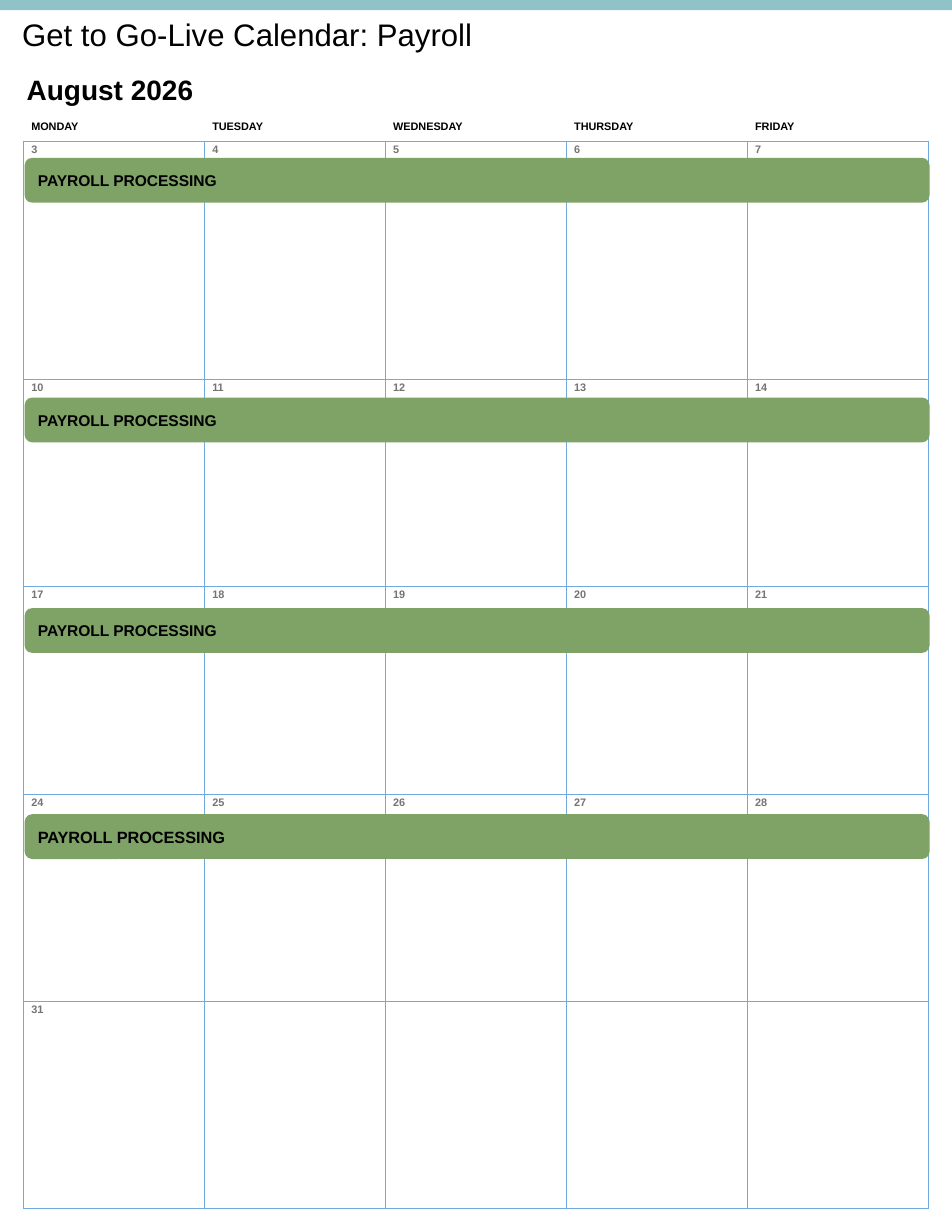
from typing import NamedTuple

from lxml.etree import SubElement
from pptx import Presentation
from pptx.dml.color import RGBColor
from pptx.enum.shapes import MSO_SHAPE as Preset
from pptx.enum.text import MSO_ANCHOR as Anchor
from pptx.oxml.ns import qn
from pptx.util import Inches, Pt

PAGE_WIDTH, PAGE_HEIGHT = 8.5, 11
GRID_LEFT, GRID_TOP, GRID_WIDTH = 0.21, 1, 8.08
HEADER_HEIGHT, FIRST_WEEK_HEIGHT, WEEK_HEIGHT = 0.26, 2.13, 1.85
WEEKDAYS = ["MONDAY", "TUESDAY", "WEDNESDAY", "THURSDAY", "FRIDAY"]
FIRST_MONDAY, LAST_DAY, WEEKS = 3, 31, 5
BLACK, DAY_GREY, WHITE = "000000", "747474", "FFFFFF"
TEAL, GREEN, GRID_BLUE = "90C3C8", "7FA267", "71AAE0"


class Heading(NamedTuple):
    """A line of text above the calendar."""
    words: str
    left: float
    top: float
    width: float
    height: float
    size: float
    bold: bool


class Event(NamedTuple):
    """A bar across one week, dropped below the top of its row."""
    words: str
    week: int
    drop: float
    size: float = 10


HEADINGS = [
    Heading("August 2026", 0.14, 0.6, 2.82, 0.4, 18, True),
    Heading("Get to Go-Live Calendar: Payroll", 0.1, 0.09, 6.96, 0.44, 20, False),
]
EVENTS = [
    Event("PAYROLL PROCESSING", 0, 0.15),
    Event("PAYROLL PROCESSING", 1, 0.16),
    Event("PAYROLL PROCESSING", 2, 0.19),
    Event("PAYROLL PROCESSING", 3, 0.18, 10.5),
]


def colour(value: str) -> RGBColor:
    """Turn a hex string into a colour."""
    return RGBColor.from_string(value)


def write(frame, words: str, size: float, bold: bool, ink: str = BLACK) -> None:
    """Add one run to the first paragraph of a frame."""
    run = frame.paragraphs[0].add_run()
    run.text = words
    run.font.name = "Arial"
    run.font.size = Pt(size)
    run.font.bold = bold
    run.font.color.rgb = colour(ink)


def week_top(week: int) -> float:
    """Return the top of a week's row."""
    earlier = FIRST_WEEK_HEIGHT + (week - 1) * WEEK_HEIGHT if week else 0
    return GRID_TOP + HEADER_HEIGHT + earlier


def draw_borders(cell, visible: str) -> None:
    """Rule the named sides of a cell and clear the others."""
    properties = cell._tc.get_or_add_tcPr()
    for position, side in enumerate("LRTB"):
        line = SubElement(properties, qn(f"a:ln{side}"), w=str(Pt(0.75)))
        if side in visible:
            fill = SubElement(line, qn("a:solidFill"))
            SubElement(fill, qn("a:srgbClr"), val=GRID_BLUE)
        else:
            SubElement(line, qn("a:noFill"))
        properties.insert(position, line)


def fill_cell(cell, words: str, header: bool) -> None:
    """Style a calendar cell and write its label."""
    cell.margin_left = cell.margin_right = Inches(0.07)
    cell.margin_top = cell.margin_bottom = Inches(0.02)
    if header:
        cell.vertical_anchor = Anchor.MIDDLE
        cell.fill.background()
    else:
        cell.fill.solid()
        cell.fill.fore_color.rgb = colour(WHITE)
    draw_borders(cell, "B" if header else "LRTB")
    if words:
        write(cell.text_frame, words, 7, True, BLACK if header else DAY_GREY)


def draw_calendar(slide) -> None:
    """Draw the weekdays and the numbered weeks as a table."""
    heights = [HEADER_HEIGHT, FIRST_WEEK_HEIGHT] + [WEEK_HEIGHT] * (WEEKS - 1)
    table = slide.shapes.add_table(
        len(heights), len(WEEKDAYS), Inches(GRID_LEFT), Inches(GRID_TOP),
        Inches(GRID_WIDTH), Inches(sum(heights))).table
    table.first_row = table.horz_banding = False
    for row, height in zip(table.rows, heights):
        row.height = Inches(height)
    for column, weekday in enumerate(WEEKDAYS):
        fill_cell(table.cell(0, column), weekday, True)
        for week in range(WEEKS):
            day = FIRST_MONDAY + 7 * week + column
            label = str(day) if day <= LAST_DAY else ""
            fill_cell(table.cell(week + 1, column), label, False)


def draw_bar(slide, preset: Preset, left: float, top: float,
             width: float, height: float, fill: str):
    """Draw a flat filled shape without an outline."""
    bar = slide.shapes.add_shape(
        preset, Inches(left), Inches(top), Inches(width), Inches(height))
    bar.shadow.inherit = False
    bar.fill.solid()
    bar.fill.fore_color.rgb = colour(fill)
    bar.line.fill.background()
    return bar


def draw_heading(slide, heading: Heading) -> None:
    """Draw a heading in its text box."""
    frame = slide.shapes.add_textbox(
        Inches(heading.left), Inches(heading.top),
        Inches(heading.width), Inches(heading.height)).text_frame
    frame.word_wrap = True
    write(frame, heading.words, heading.size, heading.bold)


def draw_event(slide, event: Event) -> None:
    """Draw an event bar over its week."""
    bar = draw_bar(slide, Preset.ROUNDED_RECTANGLE, GRID_LEFT + 0.01,
                   week_top(event.week) + event.drop, GRID_WIDTH, 0.4, GREEN)
    frame = bar.text_frame
    frame.vertical_anchor = Anchor.MIDDLE
    frame.paragraphs[0].alignment = 1
    write(frame, event.words, event.size, True)


def main() -> None:
    """Build the calendar page."""
    deck = Presentation()
    deck.slide_width, deck.slide_height = Inches(PAGE_WIDTH), Inches(PAGE_HEIGHT)
    slide = deck.slides.add_slide(deck.slide_layouts[6])
    draw_calendar(slide)
    draw_bar(slide, Preset.RECTANGLE, 0, 0, PAGE_WIDTH, 0.09, TEAL)
    for heading in HEADINGS:
        draw_heading(slide, heading)
    for event in EVENTS:
        draw_event(slide, event)
    deck.save("out.pptx")


if __name__ == "__main__":
    main()
